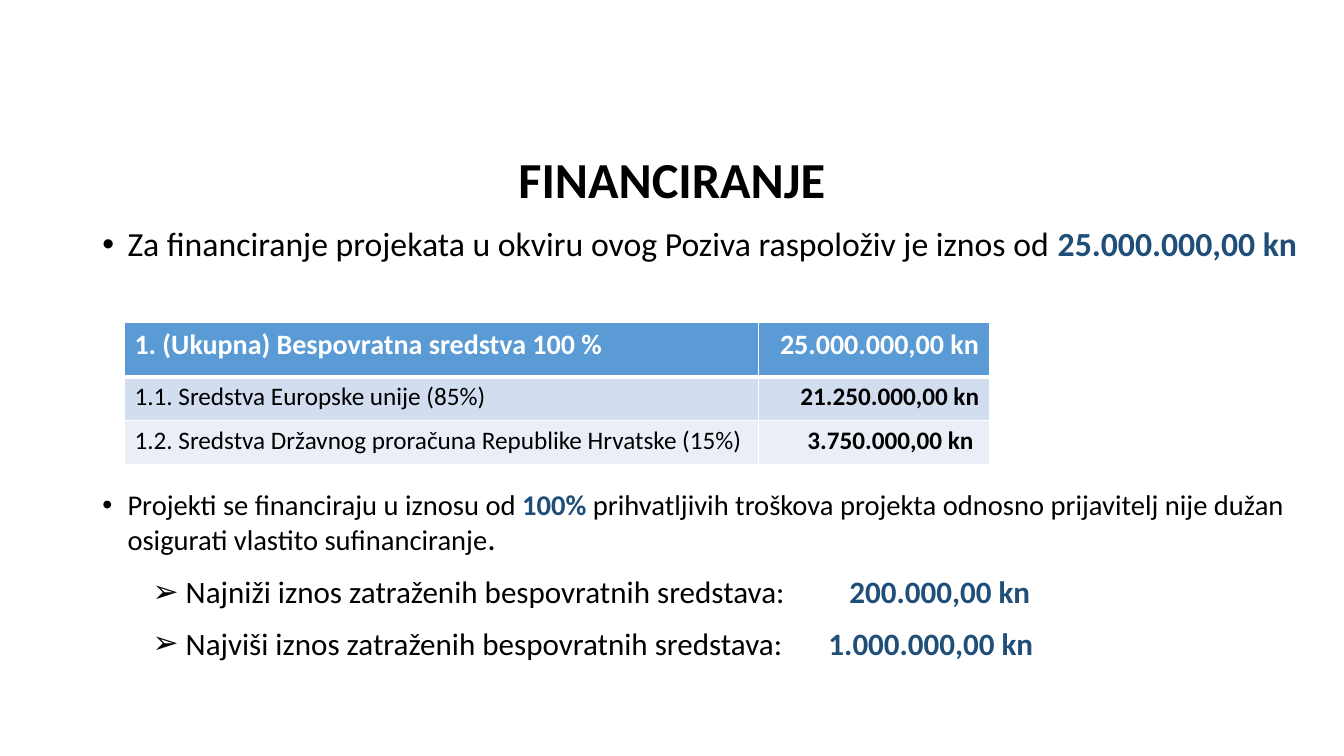
from lxml import etree
from pptx import Presentation
from pptx.dml.color import RGBColor
from pptx.enum.text import MSO_ANCHOR, PP_ALIGN
from pptx.oxml.ns import qn
from pptx.util import Pt

LEFT, MID, RIGHT = PP_ALIGN.LEFT, PP_ALIGN.CENTER, PP_ALIGN.RIGHT
CENTRE = MSO_ANCHOR.MIDDLE
FONT = "Calibri"
HEX = {
    "black": "000000",
    "white": "FFFFFF",
    "navy": "1F4E79",
    "head": "5B9BD5",
    "band": "D2DEEF",
    "pale": "EAEFF7",
}
ROWS = [
    ("1. (Ukupna) Bespovratna sredstva 100 %", "25.000.000,00 kn"),
    ("1.1. Sredstva Europske unije (85%)", "21.250.000,00 kn"),
    ("1.2. Sredstva Državnog proračuna Republike Hrvatske (15%)",
     "3.750.000,00 kn "),
]
LIMITS = [
    (" Najniži iznos zatraženih bespovratnih sredstava:\t", "200.000,00 kn", 533.7),
    (" Najviši iznos zatraženih bespovratnih sredstava: \t", "1.000.000,00 kn", 518.7),
]


def add_run(para, text, size, color="black", bold=False):
    run = para.add_run()
    run.text = text
    font = run.font
    font.name, font.size, font.bold = FONT, Pt(size), bold
    font.color.rgb = RGBColor.from_string(HEX[color])


def add_item(para, mark, runs, left, line, gap=0, tab=None):
    props = para._p.get_or_add_pPr()
    props.set("marL", str(Pt(left)))
    props.set("indent", str(-Pt(18)))
    etree.SubElement(props, qn("a:buFont"), typeface="Arial")
    etree.SubElement(props, qn("a:buChar"), char=mark)
    if tab:
        stops = etree.SubElement(props, qn("a:tabLst"))
        etree.SubElement(stops, qn("a:tab"), pos=str(Pt(tab)), algn="l")
    para.line_spacing = line
    para.space_before = Pt(gap)
    for run in runs:
        add_run(para, *run)


def add_title(slide):
    title = slide.shapes.title
    title.left, title.top = Pt(66), Pt(122.4)
    title.width, title.height = Pt(828), Pt(54.7)
    frame = title.text_frame
    frame.vertical_anchor = CENTRE
    frame.margin_bottom = Pt(43)
    para = frame.paragraphs[0]
    para.alignment = MID
    para.line_spacing = 0.9
    add_run(para, "FINANCIRANJE", 36, bold=True)


def add_body(slide):
    box = slide.shapes.add_textbox(Pt(66), Pt(159.1), Pt(887), Pt(317.5))
    frame = box.text_frame
    frame.word_wrap = True
    add_item(frame.paragraphs[0], "•", [
        ("Za financiranje projekata u okviru ovog Poziva raspoloživ je iznos od ", 24.1),
        ("25.000.000,00 kn", 24.1, "navy", True),
    ], 18, 0.9)
    add_item(frame.add_paragraph(), "•", [
        ("Projekti se financiraju u iznosu od ", 20.4),
        ("100% ", 20.4, "navy", True),
        ("prihvatljivih troškova projekta odnosno prijavitelj nije dužan "
         "osigurati vlastito sufinanciranje", 20.4),
        (".", 24.1),
    ], 18, 0.9, 162)
    for label, sum_, tab in LIMITS:
        para = frame.add_paragraph()
        para.level = 1
        runs = [(label, 22.2), (sum_, 22.2, "navy", True)]
        add_item(para, "➢", runs, 54, 1.2, 5, tab)


def set_edges(cell, base):
    props = cell._tc.get_or_add_tcPr()
    edges = (("L", 1), ("R", 1), ("T", 1), ("B", base))
    for spot, (side, width) in enumerate(edges):
        line = etree.Element(qn("a:ln" + side), w=str(Pt(width)))
        fill = etree.SubElement(line, qn("a:solidFill"))
        etree.SubElement(fill, qn("a:srgbClr"), val=HEX["white"])
        props.insert(spot, line)


def add_grid(slide):
    frame = slide.shapes.add_table(3, 2, Pt(88.9), Pt(230.4), Pt(617.8), Pt(101.6))
    table = frame.table
    for col, width in zip(table.columns, (452.9, 164.9)):
        col.width = Pt(width)
    for row, high in zip(table.rows, (38.8, 31.4, 31.4)):
        row.height = Pt(high)
    fills = ("head", "band", "pale")
    for i, texts in enumerate(ROWS):
        head = i == 0
        for j, text in enumerate(texts):
            cell = table.cell(i, j)
            cell.fill.solid()
            cell.fill.fore_color.rgb = RGBColor.from_string(HEX[fills[i]])
            set_edges(cell, 3 if head else 1)
            para = cell.text_frame.paragraphs[0]
            para.alignment = RIGHT if j else LEFT
            add_run(para, text, 20 if head else 18,
                    "white" if head else "black", head or j == 1)


def main():
    deck = Presentation()
    deck.slide_width, deck.slide_height = Pt(960), Pt(540)
    slide = deck.slides.add_slide(deck.slide_layouts[5])
    add_title(slide)
    add_body(slide)
    add_grid(slide)
    deck.save("out.pptx")


if __name__ == "__main__":
    main()
